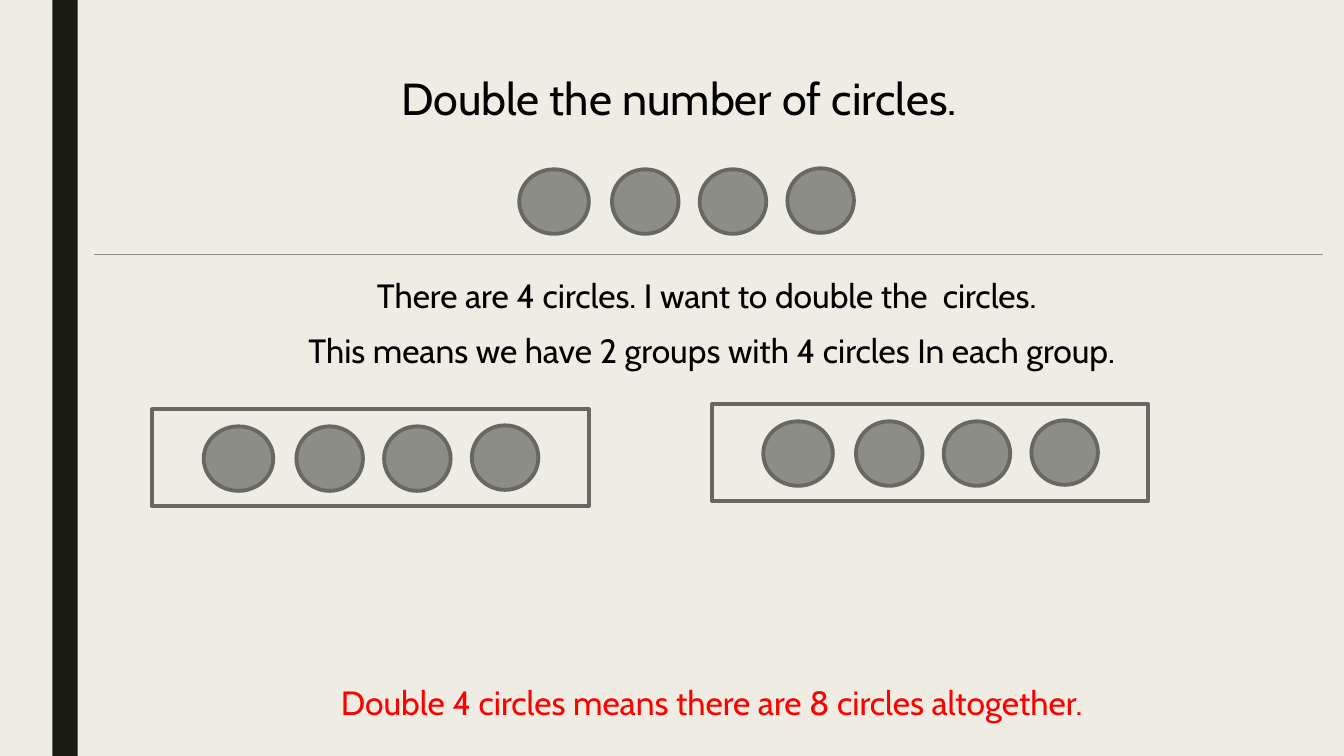
from dataclasses import dataclass

from lxml.etree import SubElement
from pptx import Presentation
from pptx.dml.color import RGBColor
from pptx.enum.shapes import MSO_CONNECTOR as Connector, MSO_SHAPE as Shape
from pptx.enum.text import MSO_AUTO_SIZE as AutoSize, PP_ALIGN as Align
from pptx.oxml.ns import qn
from pptx.shapes.autoshape import Shape as AutoShape
from pptx.shapes.shapetree import GroupShapes
from pptx.slide import Slide
from pptx.util import Inches, Pt

FONT = "Cabin"
PAPER, BAR, GREY, OUTLINE = "EFEDE3", "191B0E", "8C8D86", "686863"
BLACK, RED = "000000", "FF0000"


@dataclass
class Sentence:
    text: str
    left: float
    top: float
    width: float = 12.04
    height: float = 0.5
    size: int = 24
    color: str = BLACK
    align: Align = Align.CENTER
    wrap: bool = True


@dataclass
class Circle:
    """Place within a row, measured from the row's first circle."""
    dx: float
    dy: float = 0
    width: float = 0.66
    height: float = 0.64


@dataclass
class CircleRow:
    left: float
    top: float
    boxed: bool = True


CIRCLES = [Circle(0, width=0.69), Circle(0.92), Circle(1.79), Circle(2.66, -0.01)]
ROWS = [CircleRow(5.15, 1.68, boxed=False), CircleRow(2.02, 4.23), CircleRow(7.57, 4.18)]
SENTENCES = [
    Sentence("Double the number of circles.", 3.88, 0.65, 5.88, 0.64, 32,
             align=Align.LEFT, wrap=False),
    Sentence("There are 4 circles. I want to double the  circles.", 0.99, 2.68),
    Sentence("This means we have 2 groups with 4 circles In each group.", 1.04, 3.22),
    Sentence("Double 4 circles means there are 8 circles altogether.", 1.04, 6.72, color=RED),
]


def rgb(color: str) -> RGBColor:
    return RGBColor.from_string(color)


def add_figure(shapes: GroupShapes, kind: Shape, left: float, top: float, width: float,
               height: float, fill: str | None, line: str | None = OUTLINE) -> AutoShape:
    figure = shapes.add_shape(kind, Inches(left), Inches(top), Inches(width), Inches(height))
    figure.shadow.inherit = False
    if fill:
        figure.fill.solid()
        figure.fill.fore_color.rgb = rgb(fill)
    else:
        figure.fill.background()
    if line:
        figure.line.color.rgb = rgb(line)
        figure.line.width = Pt(2.75)
    else:
        figure.line.fill.background()
    return figure


def add_sentence(slide: Slide, sentence: Sentence) -> None:
    box = slide.shapes.add_textbox(Inches(sentence.left), Inches(sentence.top),
                                   Inches(sentence.width), Inches(sentence.height))
    frame = box.text_frame
    frame.word_wrap = sentence.wrap
    frame.auto_size = AutoSize.SHAPE_TO_FIT_TEXT
    paragraph = frame.paragraphs[0]
    paragraph.text = sentence.text
    paragraph.alignment = sentence.align
    paragraph.font.name = FONT
    paragraph.font.size = Pt(sentence.size)
    paragraph.font.color.rgb = rgb(sentence.color)


def add_circle_row(slide: Slide, row: CircleRow) -> None:
    group = slide.shapes.add_group_shape().shapes
    if row.boxed:
        add_figure(group, Shape.RECTANGLE, row.left - 0.51, row.top - 0.17, 4.33, 0.96, None)
    for circle in CIRCLES:
        add_figure(group, Shape.OVAL, row.left + circle.dx, row.top + circle.dy,
                   circle.width, circle.height, GREY)


def add_divider(slide: Slide) -> None:
    divider = slide.shapes.add_connector(Connector.STRAIGHT, Inches(0.93), Inches(2.52),
                                         Inches(13.12), Inches(2.52))
    divider.line.color.rgb = rgb(GREY)
    divider.line.width = Pt(0.5)
    SubElement(divider.element.spPr, qn("a:effectLst"))


def main() -> None:
    presentation = Presentation()
    presentation.slide_width = Inches(13.33)
    presentation.slide_height = Inches(7.5)
    slide = presentation.slides.add_slide(presentation.slide_layouts[6])
    slide.background.fill.solid()
    slide.background.fill.fore_color.rgb = rgb(PAPER)

    add_figure(slide.shapes, Shape.RECTANGLE, 0.52, 0, 0.25, 7.5, BAR, None)
    add_divider(slide)
    for sentence in SENTENCES:
        add_sentence(slide, sentence)
    for row in ROWS:
        add_circle_row(slide, row)
    presentation.save("out.pptx")


if __name__ == "__main__":
    main()
